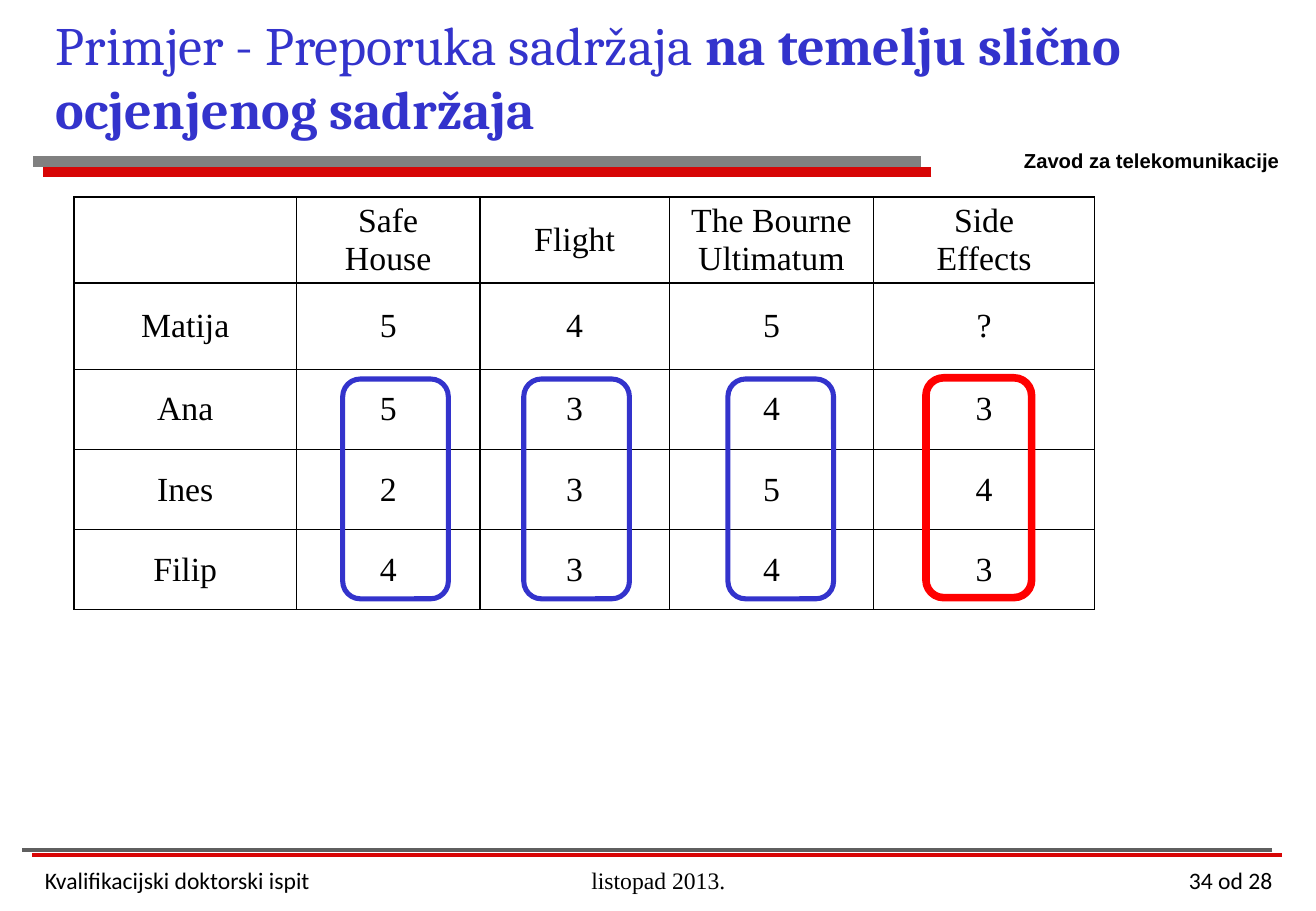
from dataclasses import dataclass

from lxml.etree import SubElement
from pptx import Presentation
from pptx.dml.color import RGBColor
from pptx.enum.shapes import MSO_CONNECTOR, MSO_SHAPE
from pptx.enum.text import MSO_ANCHOR, MSO_AUTO_SIZE, PP_ALIGN
from pptx.oxml import parse_xml
from pptx.oxml.ns import nsdecls, qn
from pptx.util import Inches, Pt

WIDTH, HEIGHT = Inches(10.83), Inches(7.5)


@dataclass(frozen=True)
class Theme:
    ink: str = "000000"
    accent: str = "3333CC"
    highlight: str = "FF0000"
    header_rule: str = "808080"
    footer_rule: str = "5F5F5F"
    rule_shadow: str = "D70505"
    heading: str = "Cambria"
    table: str = "Times New Roman"
    footer: str = "Calibri"
    label: str = "Arial"
    heading_size: int = 32
    table_size: int = 20
    footer_size: int = 14
    label_size: int = 12


THEME = Theme()

RATINGS = [
    ["", "Safe\vHouse", "Flight", "The Bourne\vUltimatum", "Side\vEffects"],
    ["Matija", "5", "4", "5", "?"],
    ["Ana", "5", "3", "4", "3"],
    ["Ines", "2", "3", "5", "4"],
    ["Filip", "4", "3", "4", "3"],
]
# Column widths and row heights, in percent of the slide
FILM_COLUMNS = [16.9, 13.94, 14.4, 15.51, 16.81]
USER_ROWS = [9.47, 9.47, 8.8, 8.8, 8.8]


def across(percent):
    return int(WIDTH * percent / 100)


def down(percent):
    return int(HEIGHT * percent / 100)


def area(left, top, width, height):
    """Turn percentages of the slide into left, top, width and height."""
    return across(left), down(top), across(width), down(height)


def apply(target, values):
    for name, value in values.items():
        setattr(target, name, value)


def set_font(font, face, size, color=THEME.ink, bold=False):
    apply(font, {"name": face, "size": Pt(size), "bold": bold})
    font.color.rgb = RGBColor.from_string(color)


def add_title(slide, plain, emphasis):
    title = slide.shapes.title
    apply(title, dict(zip(("left", "top", "width", "height"),
                          area(3.33, 0, 85, 16.67))))
    apply(title.text_frame, {"word_wrap": True,
                             "auto_size": MSO_AUTO_SIZE.NONE,
                             "vertical_anchor": MSO_ANCHOR.MIDDLE})
    paragraph = title.text_frame.paragraphs[0]
    paragraph.alignment = PP_ALIGN.LEFT
    for wording, bold in ((plain, False), (emphasis, True)):
        run = paragraph.add_run()
        run.text = wording
        set_font(run.font, THEME.heading, THEME.heading_size,
                 THEME.accent, bold)


def add_label(slide, wording, box, face, size, align=PP_ALIGN.LEFT, bold=False):
    frame = slide.shapes.add_textbox(*area(*box)).text_frame
    frame.word_wrap = True
    paragraph = frame.paragraphs[0]
    apply(paragraph, {"text": wording, "alignment": align})
    set_font(paragraph.runs[0].font, face, size, bold=bold)


def add_rule(slide, start, end, top, color, weight, distance, angle):
    """Draw a horizontal rule with a hard shadow; distance in points."""
    rule = slide.shapes.add_connector(MSO_CONNECTOR.STRAIGHT, across(start),
                                      down(top), across(end), down(top))
    rule.line.width = Pt(weight)
    rule.line.color.rgb = RGBColor.from_string(color)
    effects = SubElement(rule._element.spPr, qn("a:effectLst"))
    shadow = SubElement(effects, qn("a:outerShdw"), blurRad="0",
                        dist=str(Pt(distance)), dir=str(angle * 60000),
                        algn="ctr", rotWithShape="0")
    SubElement(shadow, qn("a:srgbClr"), val=THEME.rule_shadow)


def add_borders(cell):
    properties = cell._tc.get_or_add_tcPr()
    for position, side in enumerate(("lnL", "lnR", "lnT", "lnB")):
        properties.insert(position, parse_xml(
            f'<a:{side} {nsdecls("a")} w="{Pt(1)}"><a:solidFill>'
            f'<a:srgbClr val="{THEME.ink}"/></a:solidFill></a:{side}>'))


def add_ratings_table(slide):
    box = area(5.63, 21.6, sum(FILM_COLUMNS), sum(USER_ROWS))
    table = slide.shapes.add_table(len(USER_ROWS), len(FILM_COLUMNS),
                                   *box).table
    apply(table, {"first_row": False, "horz_banding": False})
    for column, width in zip(table.columns, FILM_COLUMNS):
        column.width = across(width)
    for row, height, ratings in zip(table.rows, USER_ROWS, RATINGS):
        row.height = down(height)
        for cell, rating in zip(row.cells, ratings):
            apply(cell, {"text": rating, "vertical_anchor": MSO_ANCHOR.MIDDLE,
                         "margin_left": Inches(0.07),
                         "margin_right": Inches(0.07),
                         "margin_top": 0, "margin_bottom": 0})
            cell.fill.background()
            add_borders(cell)
            paragraph = cell.text_frame.paragraphs[0]
            paragraph.alignment = PP_ALIGN.CENTER
            set_font(paragraph.font, THEME.table, THEME.table_size)
            for run in paragraph.runs:
                set_font(run.font, THEME.table, THEME.table_size)


def add_ratings_frame(slide, left, top, color, weight):
    """Outline one film's ratings by the three other users."""
    frame = slide.shapes.add_shape(MSO_SHAPE.ROUNDED_RECTANGLE,
                                   *area(left, top, 8.03, 24.13))
    frame.shadow.inherit = False
    frame.fill.background()
    frame.line.width = Pt(weight)
    frame.line.color.rgb = RGBColor.from_string(color)


def main():
    deck = Presentation()
    apply(deck, {"slide_width": WIDTH, "slide_height": HEIGHT})
    slide = deck.slides.add_slide(deck.slide_layouts[5])

    add_rule(slide, 70, 2.5, 17.73, THEME.header_rule, 6, 8.5, 45)
    add_rule(slide, 96.67, 1.66, 93.33, THEME.footer_rule, 2.25, 6.7, 27)
    add_label(slide, "Zavod za telekomunikacije", (76.9, 15.6, 23.1, 4),
              THEME.label, THEME.label_size, bold=True)
    add_title(slide, "Primjer - Preporuka sadržaja ",
              "na temelju slično ocjenjenog sadržaja")

    add_ratings_table(slide)
    add_ratings_frame(slide, 70.36, 41.47, THEME.highlight, 4.5)
    for left in (55.31, 39.8, 26.04):
        add_ratings_frame(slide, left, 41.6, THEME.accent, 3)

    for wording, left, width, face, align in (
            ("Kvalifikacijski doktorski ispit", 2.5, 31.67, THEME.footer,
             PP_ALIGN.LEFT),
            ("listopad 2013.", 39.6, 20.87, THEME.table, PP_ALIGN.CENTER),
            ("34 od 28", 76.73, 20.87, THEME.footer, PP_ALIGN.RIGHT)):
        add_label(slide, wording, (left, 94.4, width, 5.6), face,
                  THEME.footer_size, align)

    deck.save("out.pptx")


if __name__ == "__main__":
    main()
